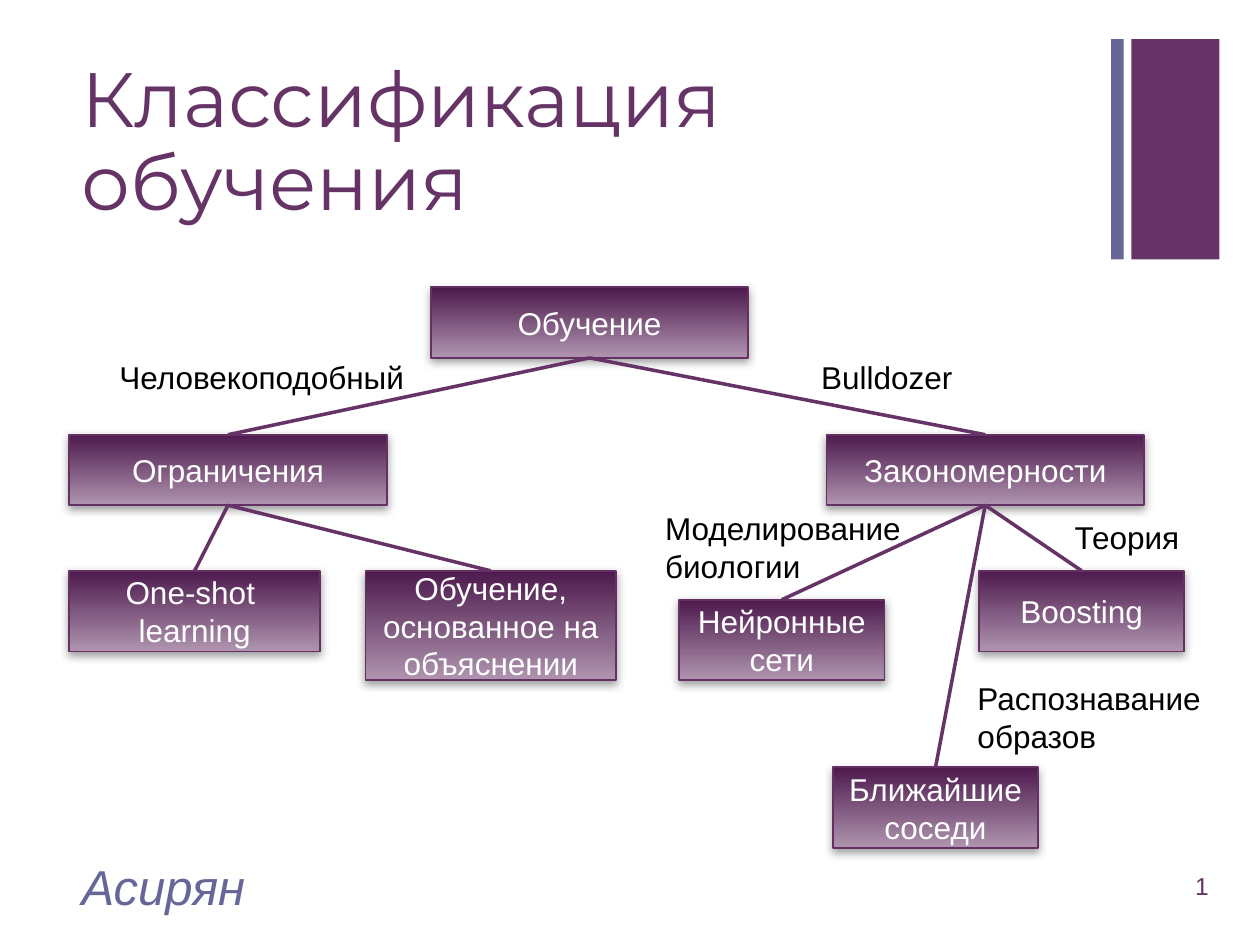
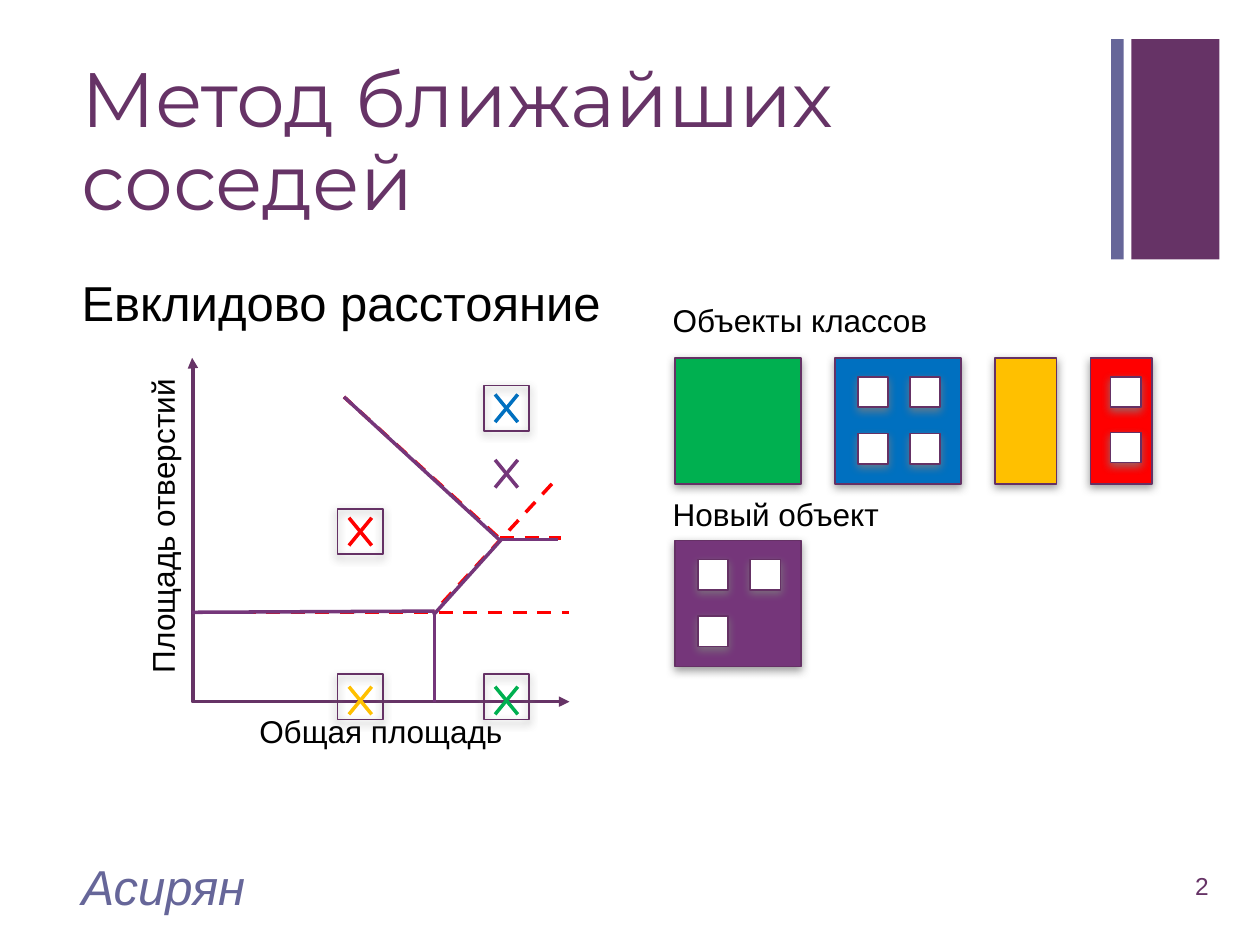
from dataclasses import dataclass

import lxml.etree
import pptx
import pptx.dml.color
import pptx.enum.dml
import pptx.enum.shapes
import pptx.enum.text
import pptx.oxml.ns
import pptx.util

Pt = pptx.util.Pt
ALIGN = pptx.enum.text.PP_ALIGN
ANCHOR = pptx.enum.text.MSO_ANCHOR
SHAPE = pptx.enum.shapes.MSO_SHAPE
CONNECTOR = pptx.enum.shapes.MSO_CONNECTOR


@dataclass(frozen=True)
class Theme:
    plum: str = "663366"
    slate: str = "666699"
    outline: str = "653165"
    node_top: str = "4D1A4D"
    node_bottom: str = "AF94AF"
    shadow: str = "808080"
    black: str = "000000"
    white: str = "FFFFFF"
    green: str = "00B050"
    blue: str = "0070C0"
    amber: str = "FFC000"
    red: str = "FF0000"
    violet: str = "75367A"
    title_font: str = "Montserrat"
    text_font: str = "Arial"
    title_size: int = 44
    large_size: int = 28
    label_size: int = 18
    number_size: int = 14


THEME = Theme()

# Shared parts: left, top, width, height in points
BANDS = [((646.5, 22.3, 50.4, 126), THEME.plum),
         ((635, 22.3, 7.2, 126), THEME.slate)]
TITLE_AREA = (39.6, 38.2, 594.7, 87.8)
FOOTER_AREA = (39.6, 491.8, 482.4, 28.8)
NUMBER_AREA = (653.8, 491.8, 43.9, 28.8)
FOOTER = "Асирян"

# Classification tree
TREE_TITLE = "Классификация обучения"
WIDE, MEDIUM, TALL, NARROW = (181.4, 40.3), (143.3, 46.1), (143.3, 62.6), (117.4, 46.1)
NODES = {
    "learning": ("Обучение", (246.2, 164.2), WIDE),
    "patterns": ("Закономерности", (472.3, 248.4), WIDE),
    "neighbours": ("Ближайшие\nсоседи", (475.9, 438.5), NARROW),
    "networks": ("Нейронные\nсети", (388.1, 342.7), NARROW),
    "boosting": ("Boosting", (559.4, 326.2), NARROW),
    "constraints": ("Ограничения", (39.6, 248.4), WIDE),
    "one_shot": ("One-shot \nlearning", (39.6, 326.2), MEDIUM),
    "explanation": ("Обучение,\nоснованное на объяснении", (208.8, 326.2), TALL),
}
BRANCHES = {
    "learning": ["constraints", "patterns"],
    "constraints": ["one_shot", "explanation"],
    "patterns": ["networks", "boosting", "neighbours"],
}
BRANCH_LABELS = [
    ("Моделирование\nбиологии", (373, 287.3, 172.8, 51)),
    ("Теория", (607, 292.3, 108, 29)),
    ("Распознавание\nобразов", (551.5, 384.5, 166, 51)),
    ("Bulldozer", (462.2, 200.9, 172.8, 29)),
    ("Человекоподобный", (61.2, 200.9, 192.2, 29)),
]

# Nearest neighbours
METHOD_TITLE = "Метод ближайших соседей"
METHOD_BODY = "Евклидово расстояние"
BODY_AREA = (39.6, 156.2, 594.7, 45)
PLOT_LABELS = [
    ("Общая площадь", (141.1, 403.2, 161.3, 29), 0),
    ("Площадь отверстий", (-2.9, 281.5, 191.5, 29), 270),
    ("Объекты классов", (377.3, 168.5, 191.5, 29), 0),
    ("Новый объект", (377.3, 279.4, 191.5, 29), 0),
]
AXES = ((109.8, 204.5), (325.4, 401))
CROSS_HALF = (6.5, 7.9)
CROSSES = [
    ((205.9, 303.8), THEME.red),
    ((205.9, 400.3), THEME.amber),
    ((289.4, 400.3), THEME.green),
    ((289.4, 233.3), THEME.blue),
    ((289.4, 270.7), THEME.violet),
]
FRAME_SIDE = 25.9
FRAME_CENTRES = [(205.9, 303.8), (205.9, 398.2), (289.4, 398.2), (289.4, 233.3)]
DASHED_BORDERS = [
    ((109.8, 349.9), (325.4, 349.9)),
    ((248.4, 349.9), (248.4, 403)),
    ((315.4, 276.5), (248.4, 349.2)),
    ((285.8, 307.4), (320.4, 307.4)),
    ((284.4, 306.7), (196.6, 226.8)),
]
SOLID_BORDERS = [
    ((109.8, 349.9), (248.4, 349.2)),
    ((248.4, 349.9), (248.4, 401)),
    ((286.6, 308.2), (247.7, 351.4)),
    ((285.1, 308.2), (196.6, 226.8)),
    ((284.4, 308.2), (319, 308.2)),
]
# Figures: width, colour, hole positions inside the figure
FIGURE_LEFT, FIGURE_HEIGHT, FIGURE_GAP, HOLE_SIDE = 385.9, 72, 19.3, 17.3
NEAR, FAR_X, FAR_Y, HOLE_TOP = 13, 42.8, 43.2, 10.8
CLASS_TOP, NEW_TOP = 204.5, 308.9
CLASS_FIGURES = [
    (72, THEME.green, []),
    (72, THEME.blue, [(x, y) for y in (HOLE_TOP, FAR_Y) for x in (NEAR, FAR_X)]),
    (35.3, THEME.amber, []),
    (35.3, THEME.red, [(11.5, HOLE_TOP), (11.5, 42.6)]),
]
NEW_FIGURES = [(72, THEME.violet, [(NEAR, HOLE_TOP), (FAR_X, HOLE_TOP), (NEAR, FAR_Y)])]


def rgb(colour):
    return pptx.dml.color.RGBColor.from_string(colour)


def points(values):
    return [Pt(value) for value in values]


def add_element(parent, tag, **attributes):
    return lxml.etree.SubElement(parent, pptx.oxml.ns.qn(tag), attributes)


def write(box, text, size=THEME.label_size, font=THEME.text_font, colour=THEME.black,
          italic=False, align=ALIGN.LEFT, anchor=ANCHOR.TOP, spacing=None):
    frame = box.text_frame
    frame.word_wrap = True
    frame.vertical_anchor = anchor
    para = frame.paragraphs[0]
    para.text = text
    para.alignment = align
    para.line_spacing = spacing
    for span in para.runs:
        span.font.name = font
        span.font.size = Pt(size)
        span.font.italic = italic
        span.font.color.rgb = rgb(colour)


def add_text(page, text, area, rotation=0, **style):
    box = page.shapes.add_textbox(*points(area))
    box.rotation = rotation
    write(box, text, **style)


def add_block(page, area, colour=None, kind=SHAPE.FLOWCHART_PROCESS):
    """Outlined shape with a soft shadow below; no colour leaves it unfilled."""
    block = page.shapes.add_shape(kind, *points(area))
    block.line.color.rgb = rgb(THEME.outline)
    block.line.width = Pt(1)
    if colour:
        block.fill.solid()
        block.fill.fore_color.rgb = rgb(colour)
    else:
        block.fill.background()
    block.shadow.inherit = False
    effects = block.element.spPr.find(pptx.oxml.ns.qn("a:effectLst"))
    shadow = add_element(effects, "a:outerShdw", blurRad=str(Pt(5)), dist=str(Pt(2)),
                         dir="5400000", rotWithShape="0")
    tint = add_element(shadow, "a:srgbClr", val=THEME.shadow)
    add_element(tint, "a:alpha", val="75000")
    return block


def add_line(page, start, end, colour=THEME.plum, dashed=False, kind=CONNECTOR.STRAIGHT):
    line = page.shapes.add_connector(kind, *points(start + end))
    line.line.color.rgb = rgb(colour)
    line.line.width = Pt(2)
    if dashed:
        line.line.dash_style = pptx.enum.dml.MSO_LINE.DASH
    add_element(line.element.spPr, "a:effectLst")
    return line


def add_page(deck, title):
    page = deck.slides.add_slide(deck.slide_layouts[6])
    for area, colour in BANDS:
        band = page.shapes.add_shape(SHAPE.RECTANGLE, *points(area))
        band.shadow.inherit = False
        band.fill.solid()
        band.fill.fore_color.rgb = rgb(colour)
        band.line.fill.background()
    add_text(page, title, TITLE_AREA, size=THEME.title_size, font=THEME.title_font,
             colour=THEME.plum, anchor=ANCHOR.MIDDLE, spacing=0.9)
    add_text(page, str(len(deck.slides)), NUMBER_AREA, size=THEME.number_size,
             colour=THEME.plum, align=ALIGN.RIGHT, anchor=ANCHOR.MIDDLE)
    add_text(page, FOOTER, FOOTER_AREA, size=THEME.large_size, colour=THEME.slate,
             italic=True, anchor=ANCHOR.MIDDLE)
    return page


def add_node(page, text, corner, size):
    node = add_block(page, corner + size, kind=SHAPE.RECTANGLE)
    node.fill.gradient()
    node.fill.gradient_angle = 270
    for stop, colour in zip(node.fill.gradient_stops, (THEME.node_top, THEME.node_bottom)):
        stop.color.rgb = rgb(colour)
    write(node, text, colour=THEME.white, align=ALIGN.CENTER, anchor=ANCHOR.MIDDLE)
    return node


def add_axes(page):
    """One bent line with an arrowhead at each end forms both axes."""
    axes = add_line(page, *AXES, kind=CONNECTOR.ELBOW)
    properties = axes.element.spPr
    bend = properties.find(".//" + pptx.oxml.ns.qn("a:avLst"))
    add_element(bend, "a:gd", name="adj1", fmla="val 200")
    outline = properties.find(pptx.oxml.ns.qn("a:ln"))
    for tag in ("a:headEnd", "a:tailEnd"):
        add_element(outline, tag, type="triangle")


def add_cross(page, centre, colour):
    (x, y), (dx, dy) = centre, CROSS_HALF
    add_line(page, (x - dx, y - dy), (x + dx, y + dy), colour)
    add_line(page, (x + dx, y - dy), (x - dx, y + dy), colour)


def add_figures(page, figures, top):
    left = FIGURE_LEFT
    for width, colour, holes in figures:
        add_block(page, (left, top, width, FIGURE_HEIGHT), colour)
        for x, y in holes:
            add_block(page, (left + x, top + y, HOLE_SIDE, HOLE_SIDE), THEME.white)
        left += width + FIGURE_GAP


def build_tree(deck):
    page = add_page(deck, TREE_TITLE)
    nodes = {name: add_node(page, *node) for name, node in NODES.items()}
    for parent, children in BRANCHES.items():
        for child in children:
            branch = add_line(page, (0, 0), (0, 0))
            branch.begin_connect(nodes[parent], 2)
            branch.end_connect(nodes[child], 0)
    for text, area in BRANCH_LABELS:
        add_text(page, text, area)


def build_method(deck):
    page = add_page(deck, METHOD_TITLE)
    add_text(page, METHOD_BODY, BODY_AREA, size=THEME.large_size, spacing=0.9)
    add_axes(page)
    for text, area, rotation in PLOT_LABELS:
        add_text(page, text, area, rotation)
    add_figures(page, CLASS_FIGURES, CLASS_TOP)
    add_figures(page, NEW_FIGURES, NEW_TOP)
    for centre, colour in CROSSES:
        add_cross(page, centre, colour)
    for start, end in DASHED_BORDERS:
        add_line(page, start, end, THEME.red, dashed=True)
    for x, y in FRAME_CENTRES:
        add_block(page, (x - FRAME_SIDE / 2, y - FRAME_SIDE / 2, FRAME_SIDE, FRAME_SIDE))
    for start, end in SOLID_BORDERS:
        add_line(page, start, end, THEME.violet)


def main():
    deck = pptx.Presentation()
    deck.slide_width, deck.slide_height = Pt(720), Pt(540)
    build_tree(deck)
    build_method(deck)
    deck.save("out.pptx")


if __name__ == "__main__":
    main()
